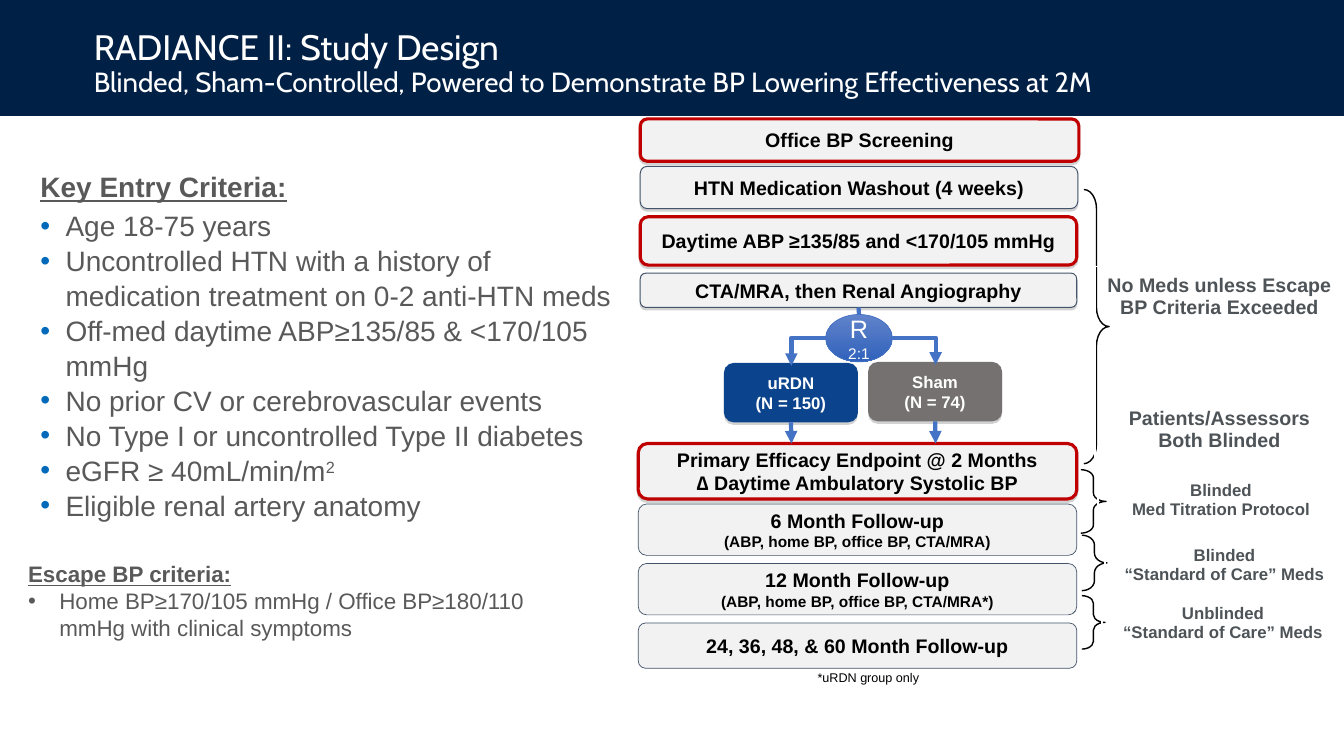
"""Build the RADIANCE II study design slide."""
from lxml.etree import SubElement
from pptx import Presentation
from pptx.dml.color import RGBColor
from pptx.enum.shapes import MSO_CONNECTOR, MSO_SHAPE
from pptx.enum.text import MSO_ANCHOR, MSO_AUTO_SIZE, PP_ALIGN
from pptx.oxml.ns import qn
from pptx.util import Inches, Pt

NAVY = RGBColor(0x00, 0x20, 0x45)
WHITE = RGBColor(0xFF, 0xFF, 0xFF)
BLACK = RGBColor(0x00, 0x00, 0x00)
GRAY = RGBColor(0x59, 0x59, 0x59)
SLATE = RGBColor(0x4D, 0x53, 0x57)
PALE = RGBColor(0xF2, 0xF2, 0xF2)
EDGE = RGBColor(0x44, 0x54, 0x6A)
RED = RGBColor(0xC0, 0x00, 0x00)
BLUE = RGBColor(0x44, 0x72, 0xC4)
ROYAL = RGBColor(0x0B, 0x43, 0x8C)
STONE = RGBColor(0x76, 0x71, 0x71)
LIGHT = RGBColor(0x61, 0x83, 0xCB)
DEEP = RGBColor(0x30, 0x62, 0xBB)
DOT = RGBColor(0x00, 0x69, 0xB9)


def write(frame, text, size, color=BLACK, bold=False, under=False, font="Arial",
          align=PP_ALIGN.LEFT, before=0, after=0, space=1.0, dot=None, indent=0):
    """Add one paragraph to a text frame and return it."""
    para = frame.paragraphs[0]
    if para.runs:
        para = frame.add_paragraph()
    props = para._p.get_or_add_pPr()
    props.set("marL", str(Inches(indent)))
    props.set("indent", str(-Inches(indent)))
    if dot is None:
        SubElement(props, qn("a:buNone"))
    else:
        SubElement(SubElement(props, qn("a:buClr")), qn("a:srgbClr"), val=str(dot))
        SubElement(props, qn("a:buFont"), typeface="Arial")
        SubElement(props, qn("a:buChar"), char="•")
    para.alignment, para.line_spacing = align, space
    para.space_before, para.space_after = Pt(before), Pt(after)
    run = para.add_run()
    run.text = text
    run.font.size, run.font.name = Pt(size), font
    run.font.bold, run.font.underline = bold, under
    run.font.color.rgb = color
    return para


def draw(kind, left, top, width, height, fill=None, line=None, weight=1, shade=False):
    """Add a preset shape with a plain fill and line."""
    shape = slide.shapes.add_shape(kind, Inches(left), Inches(top), Inches(width), Inches(height))
    shape.shadow.inherit = False
    if fill is None:
        shape.fill.background()
    else:
        shape.fill.solid()
        shape.fill.fore_color.rgb = fill
    if line is None:
        shape.line.fill.background()
    else:
        shape.line.color.rgb = line
        shape.line.width = Pt(weight)
    if shade:
        effect = shape._element.spPr.find(qn("a:effectLst"))
        cast = SubElement(effect, qn("a:outerShdw"), dist=str(Pt(1.8)), dir="5400000", rotWithShape="0")
        tone = SubElement(cast, qn("a:srgbClr"), val="808080")
        SubElement(tone, qn("a:alpha"), val="35000")
    shape.text_frame.word_wrap = True
    shape.text_frame.vertical_anchor = MSO_ANCHOR.MIDDLE
    return shape


deck = Presentation()
deck.slide_width, deck.slide_height = Inches(13.33), Inches(7.5)
slide = deck.slides.add_slide(deck.slide_layouts[1])
title, body = slide.placeholders

band = draw(MSO_SHAPE.RECTANGLE, 0, 0, 13.33, 1.15, NAVY)
slide.shapes._spTree.insert(2, band._element)

title.left, title.top, title.width, title.height = Inches(0.83), Inches(0.12), Inches(11.5), Inches(1.03)
frame = title.text_frame
frame.auto_size, frame.vertical_anchor = MSO_AUTO_SIZE.NONE, MSO_ANCHOR.MIDDLE
head = write(frame, "RADIANCE II: Study Design", 25.2, WHITE, font="Cabin", space=0.9)
head.add_line_break()
sub = head.add_run()
sub.text = "Blinded, Sham-Controlled, Powered to Demonstrate BP Lowering Effectiveness at 2M"
sub.font.size, sub.font.name, sub.font.color.rgb = Pt(19.8), "Cabin", WHITE

body.left, body.top, body.width, body.height = Inches(0.18), Inches(1.33), Inches(6.23), Inches(4.19)
frame = body.text_frame
frame.auto_size, frame.vertical_anchor = MSO_AUTO_SIZE.NONE, MSO_ANCHOR.MIDDLE
frame.margin_left = frame.margin_right = Inches(0.22)
write(frame, "Key Entry Criteria:", 20, GRAY, bold=True, under=True, after=3, space=1.04)
for text in (
    "Age 18-75 years",
    "Uncontrolled HTN with a history of medication treatment on 0-2 anti-HTN meds",
    "Off-med daytime ABP≥135/85 & <170/105 mmHg",
    "No prior CV or cerebrovascular events",
    "No Type I or uncontrolled Type II diabetes",
    "eGFR ≥ 40mL/min/m",
    "Eligible renal artery anatomy",
):
    para = write(frame, text, 20, GRAY, space=1.04, dot=DOT, indent=0.25)
    if text.startswith("eGFR"):
        power = para.add_run()
        power.text = "2"
        power.font.size, power.font.name, power.font.color.rgb = Pt(20), "Arial", GRAY
        power.font._element.set("baseline", "30000")

note = slide.shapes.add_textbox(Inches(0.18), Inches(5.51), Inches(5.38), Inches(0.91))
note.text_frame.word_wrap = True
write(note.text_frame, "Escape BP criteria:", 16, GRAY, bold=True, under=True)
write(note.text_frame, "Home BP≥170/105 mmHg / Office BP≥180/110 mmHg with clinical symptoms",
      16, GRAY, dot=GRAY, indent=0.31)

ROUND = MSO_SHAPE.ROUNDED_RECTANGLE
steps = {}
for name, left, top, width, height, line, weight, shade, lines in (
    ("wash", 6.35, 1.65, 4.34, 0.42, EDGE, 0.75, True, [("HTN Medication Washout (4 weeks)", 14)]),
    ("day", 6.35, 2.15, 4.33, 0.48, RED, 2.25, True, [("Daytime ABP ≥135/85 and <170/105 mmHg", 14)]),
    ("screen", 6.35, 1.18, 4.35, 0.42, RED, 2.25, True, [("Office BP Screening", 14)]),
    ("scan", 6.35, 2.71, 4.33, 0.34, EDGE, 0.75, True, [("CTA/MRA, then Renal Angiography", 14)]),
    ("goal", 6.33, 4.4, 4.35, 0.55, RED, 2.25, True,
     [("Primary Efficacy Endpoint @ 2 Months", 14), ("∆ Daytime Ambulatory Systolic BP", 14)]),
    ("six", 6.33, 5, 4.35, 0.51, EDGE, 0.5, False,
     [("6 Month Follow-up", 14), ("(ABP, home BP, office BP, CTA/MRA)", 11)]),
    ("year", 6.33, 5.59, 4.35, 0.51, EDGE, 0.5, False,
     [("12 Month Follow-up", 14), ("(ABP, home BP, office BP, CTA/MRA*)", 11)]),
    ("late", 6.33, 6.18, 4.35, 0.45, EDGE, 0.5, False, [("24, 36, 48, & 60 Month Follow-up", 14)]),
):
    steps[name] = draw(ROUND, left, top, width, height, PALE, line, weight, shade)
    for text, size in lines:
        write(steps[name].text_frame, text, size, bold=True, align=PP_ALIGN.CENTER)

split = draw(MSO_SHAPE.OVAL, 8.19, 3.12, 0.66, 0.47, BLUE, BLUE, 0.5)
split.fill.gradient()
split.fill.gradient_angle = 270
for stop, color in zip(split.fill.gradient_stops, (LIGHT, DEEP)):
    stop.color.rgb = color
frame = split.text_frame
frame.margin_left = frame.margin_right = frame.margin_top = frame.margin_bottom = 0
write(frame, "R", 18, WHITE, align=PP_ALIGN.CENTER)
write(frame, "2:1", 11, WHITE, align=PP_ALIGN.CENTER)

arms = []
for left, top, fill, lines in (
    (7.18, 3.6, ROYAL, ("uRDN", "(N = 150)")),
    (8.61, 3.59, STONE, ("Sham", "(N = 74)")),
):
    arm = draw(ROUND, left, top, 1.33, 0.59, fill, shade=True)
    for text in lines:
        write(arm.text_frame, text, 12, WHITE, bold=True, align=PP_ALIGN.CENTER)
    arms.append(arm)

for kind, x1, y1, x2, y2, start, end in (
    (MSO_CONNECTOR.STRAIGHT, 8.52, 3.05, 8.52, 3.12, steps["scan"], split),
    (MSO_CONNECTOR.STRAIGHT, 7.85, 4.19, 7.85, 4.4, arms[0], None),
    (MSO_CONNECTOR.STRAIGHT, 9.28, 4.18, 9.28, 4.4, arms[1], None),
    (MSO_CONNECTOR.ELBOW, 8.19, 3.35, 7.85, 3.63, None, None),
    (MSO_CONNECTOR.ELBOW, 8.85, 3.35, 9.28, 3.62, None, None),
):
    link = slide.shapes.add_connector(kind, Inches(x1), Inches(y1), Inches(x2), Inches(y2))
    link.line.color.rgb, link.line.width = BLUE, Pt(3)
    props = link._element.spPr
    SubElement(props, qn("a:effectLst"))
    if kind == MSO_CONNECTOR.ELBOW:
        props.find(qn("a:prstGeom")).set("prst", "bentConnector2")
    if start is not None:
        link.begin_connect(start, 2)
    if end is not None:
        link.end_connect(end, 0)
    else:
        SubElement(props.find(qn("a:ln")), qn("a:tailEnd"), type="triangle")

for left, top, width, height, curve in (
    (10.75, 1.88, 0.25, 2.72, 0.76),
    (10.72, 4.66, 0.25, 0.63, 0.33),
    (10.73, 5.31, 0.25, 0.55, 0.39),
    (10.73, 5.91, 0.23, 0.53, 0.33),
):
    brace = draw(MSO_SHAPE.RIGHT_BRACE, left, top, width, height, line=BLACK)
    brace.adjustments[0] = curve

for left, top, width, height, size, lines in (
    (10.86, 2.64, 2.47, 1.88, 14, [("No Meds unless Escape BP Criteria Exceeded", 0),
                                   ("Patients/Assessors", 64), ("Both Blinded", 0)]),
    (10.89, 4.62, 2.44, 0.68, 12, [("Blinded", 0), ("Med Titration Protocol", 0)]),
    (10.96, 5.29, 2.37, 0.63, 12, [("Blinded", 0), ("“Standard of Care” Meds", 0)]),
    (10.93, 5.77, 2.4, 0.83, 12, [("Unblinded", 0), ("“Standard of Care” Meds", 0)]),
):
    grid = slide.shapes.add_table(1, 1, Inches(left), Inches(top), Inches(width), Inches(height)).table
    grid.first_row = grid.horz_banding = False
    cell = grid.cell(0, 0)
    cell.fill.background()
    cell.vertical_anchor = MSO_ANCHOR.MIDDLE
    for text, gap in lines:
        write(cell.text_frame, text, size, SLATE, bold=True, align=PP_ALIGN.CENTER, before=gap)

foot = slide.shapes.add_textbox(Inches(8.01), Inches(6.6), Inches(1.22), Inches(0.25))
foot.text_frame.word_wrap = True
write(foot.text_frame, "*uRDN group only", 9)

deck.save("out.pptx")
